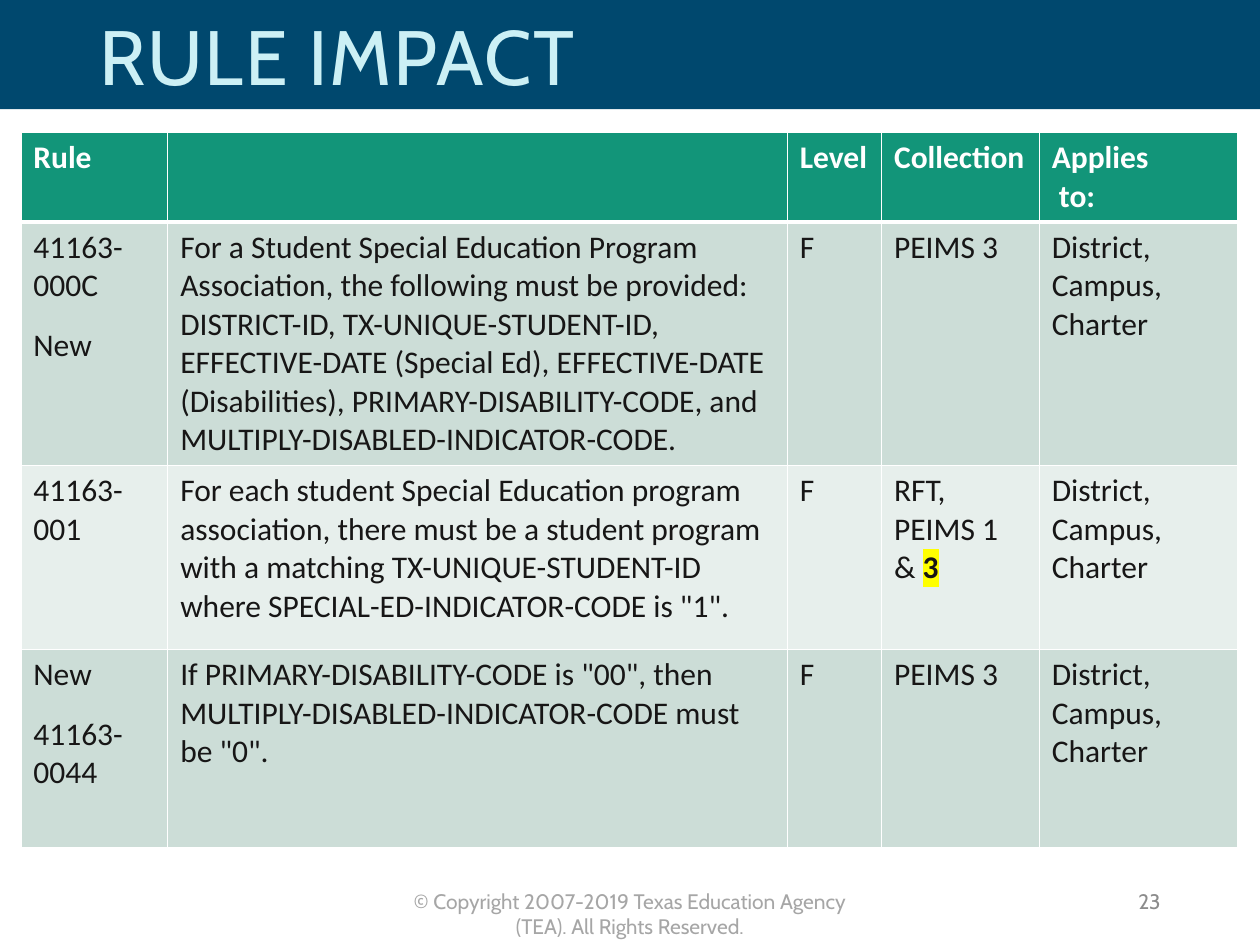
from lxml.etree import SubElement
from pptx import Presentation
from pptx.dml.color import RGBColor
from pptx.enum.shapes import MSO_SHAPE
from pptx.enum.text import MSO_ANCHOR, MSO_AUTO_SIZE, PP_ALIGN
from pptx.oxml import parse_xml
from pptx.oxml.ns import nsdecls, qn
from pptx.util import Cm, Pt

WHITE, INK, GREEN = "FFFFFF", "171616", "129579"
BANDS = ("CCDDD7", "E7EFEC")
COLUMN_WIDTHS = (2.96, 12.49, 1.9, 3.18, 4.01)
ROW_HEIGHTS = (1.78, 4.91, 3.71, 3.99)
APPLIES_TO = ["District, Campus,", "Charter"]

# Each cell is a list of paragraphs; text between asterisks is highlighted
HEADER = [["Rule"], [], ["Level"], ["Collection"], ["Applies", " to:"]]
RULES = [
    (["41163-000C", "New"],
     "For a Student Special Education Program Association, the following must "
     "be provided: DISTRICT-ID, TX-UNIQUE-STUDENT-ID, EFFECTIVE-DATE (Special "
     "Ed), EFFECTIVE-DATE (Disabilities), PRIMARY-DISABILITY-CODE, and "
     "MULTIPLY-DISABLED-INDICATOR-CODE.",
     "PEIMS 3"),
    (["41163-001"],
     "For each student Special Education program association, there must be a "
     "student program with a matching TX-UNIQUE-STUDENT-ID where "
     'SPECIAL-ED-INDICATOR-CODE is "1".',
     "RFT, PEIMS 1 & *3*"),
    (["New", "41163-0044"],
     'If PRIMARY-DISABILITY-CODE is "00", then '
     'MULTIPLY-DISABLED-INDICATOR-CODE must be "0".',
     "PEIMS 3"),
]


def color(value):
    return RGBColor.from_string(value)


def add_span(para, text, font, size, ink, bold=False):
    span = para.add_run()
    span.text = text
    span.font.name = font
    span.font.size = Pt(size)
    span.font.bold = bold
    span.font.color.rgb = color(ink)
    return span


def highlight(span, value):
    mark = parse_xml(f'<a:highlight {nsdecls("a")}><a:srgbClr val="{value}"/></a:highlight>')
    span.font._element.find(qn("a:latin")).addprevious(mark)


def add_banner(page, left, top, width, height):
    # Dark band across the top, behind the title
    band = page.shapes.add_shape(MSO_SHAPE.RECTANGLE, left, top, width, height)
    band.shadow.inherit = False
    band.fill.solid()
    band.fill.fore_color.rgb = color("00486E")
    band.line.fill.background()
    page.shapes.title._element.addprevious(band._element)


def add_title(page, left, top, width, height):
    title = page.shapes.title
    title.left, title.top, title.width, title.height = left, top, width, height
    frame = title.text_frame
    frame.vertical_anchor = MSO_ANCHOR.MIDDLE
    para = frame.paragraphs[0]
    para.alignment = PP_ALIGN.LEFT
    para.line_spacing = 0.9
    span = add_span(para, "RULE IMPACT", "Cabin", 44, "CCF0F5")
    span.font._element.set("spc", "100")


def set_borders(cell, bottom):
    properties = cell._tc.get_or_add_tcPr()
    for place, (side, width) in enumerate(zip("LRTB", (1, 1, 1, bottom))):
        line = SubElement(properties, qn(f"a:ln{side}"), w=str(Pt(width)))
        fill = SubElement(line, qn("a:solidFill"))
        SubElement(fill, qn("a:srgbClr"), val=WHITE)
        properties.insert(place, line)


def fill_cell(cell, texts, fill, ink, bold, before=0, after=0):
    cell.fill.solid()
    cell.fill.fore_color.rgb = color(fill)
    frame = cell.text_frame
    for index, text in enumerate(texts):
        para = frame.add_paragraph() if index else frame.paragraphs[0]
        para.space_before = Pt(before if index else 0)
        para.space_after = Pt(after if index or before else 0)
        for part, words in enumerate(text.split("*")):
            marked = part % 2 == 1
            if words:
                span = add_span(para, words, "Calibri", 18, ink, bold or marked)
                if marked:
                    highlight(span, "FFFF00")


def add_rules_table(page, left, top, width, height):
    table = page.shapes.add_table(len(ROW_HEIGHTS), len(COLUMN_WIDTHS),
                                  left, top, width, height).table
    for column, size in zip(table.columns, COLUMN_WIDTHS):
        column.width = Cm(size)
    for row, size in zip(table.rows, ROW_HEIGHTS):
        row.height = Cm(size)

    # Header row
    for cell, texts in zip(table.rows[0].cells, HEADER):
        fill_cell(cell, texts, GREEN, WHITE, True)
        set_borders(cell, 3)

    # One banded row for each rule
    for number, (rule, wording, collection) in enumerate(RULES):
        row = [rule, [wording], ["F"], [collection], APPLIES_TO]
        for cell, texts in zip(table.rows[number + 1].cells, row):
            before = 0 if texts is APPLIES_TO else 6
            fill_cell(cell, texts, BANDS[number % 2], INK, False, before, 6)
            set_borders(cell, 1)


def add_note(page, text, ink, alignment, anchor, left, top, width, height):
    box = page.shapes.add_textbox(left, top, width, height)
    frame = box.text_frame
    frame.word_wrap = True
    frame.auto_size = MSO_AUTO_SIZE.NONE
    frame.vertical_anchor = anchor
    para = frame.paragraphs[0]
    para.alignment = alignment
    add_span(para, text, "Cabin", 12, ink)


def main():
    deck = Presentation()
    deck.slide_width, deck.slide_height = Cm(25.4), Cm(19.05)
    page = deck.slides.add_slide(deck.slide_layouts[5])
    add_banner(page, 0, 0, deck.slide_width, Cm(2.2))
    add_title(page, Cm(1.75), Cm(0.13), Cm(20.32), Cm(2.2))
    add_rules_table(page, Cm(0.42), Cm(2.67),
                    Cm(sum(COLUMN_WIDTHS)), Cm(sum(ROW_HEIGHTS)))
    # Footer: copyright line and page number
    add_note(page, "© Copyright 2007-2019 Texas Education Agency (TEA). All Rights Reserved.",
             "A6A6A6", PP_ALIGN.CENTER, MSO_ANCHOR.TOP,
             Cm(7.71), Cm(17.78), Cm(9.98), Cm(1.27))
    add_note(page, "23", "8C8C8C", PP_ALIGN.RIGHT, MSO_ANCHOR.MIDDLE,
             Cm(17.93), Cm(17.65), Cm(5.72), Cm(1.02))
    deck.save("out.pptx")


if __name__ == "__main__":
    main()
